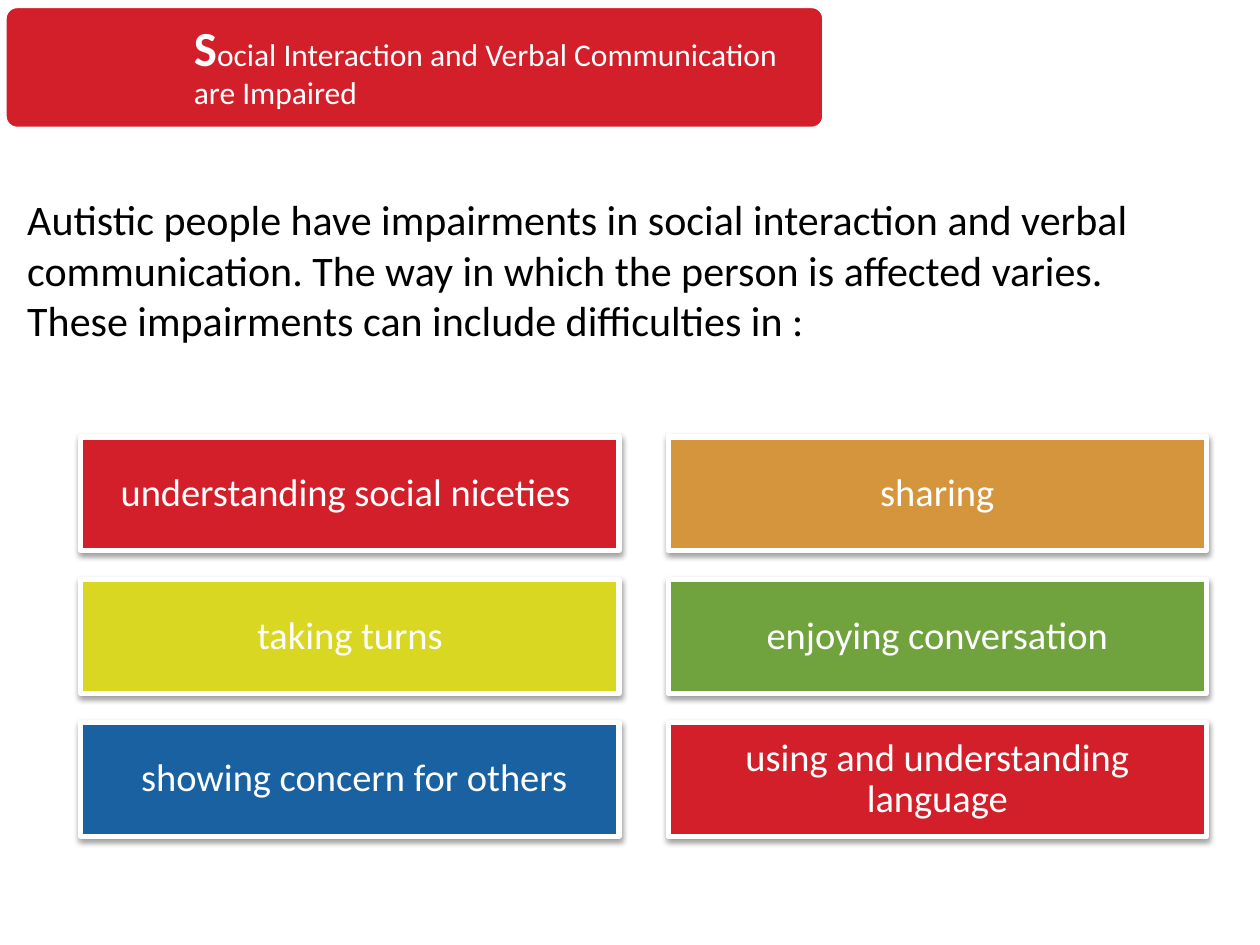
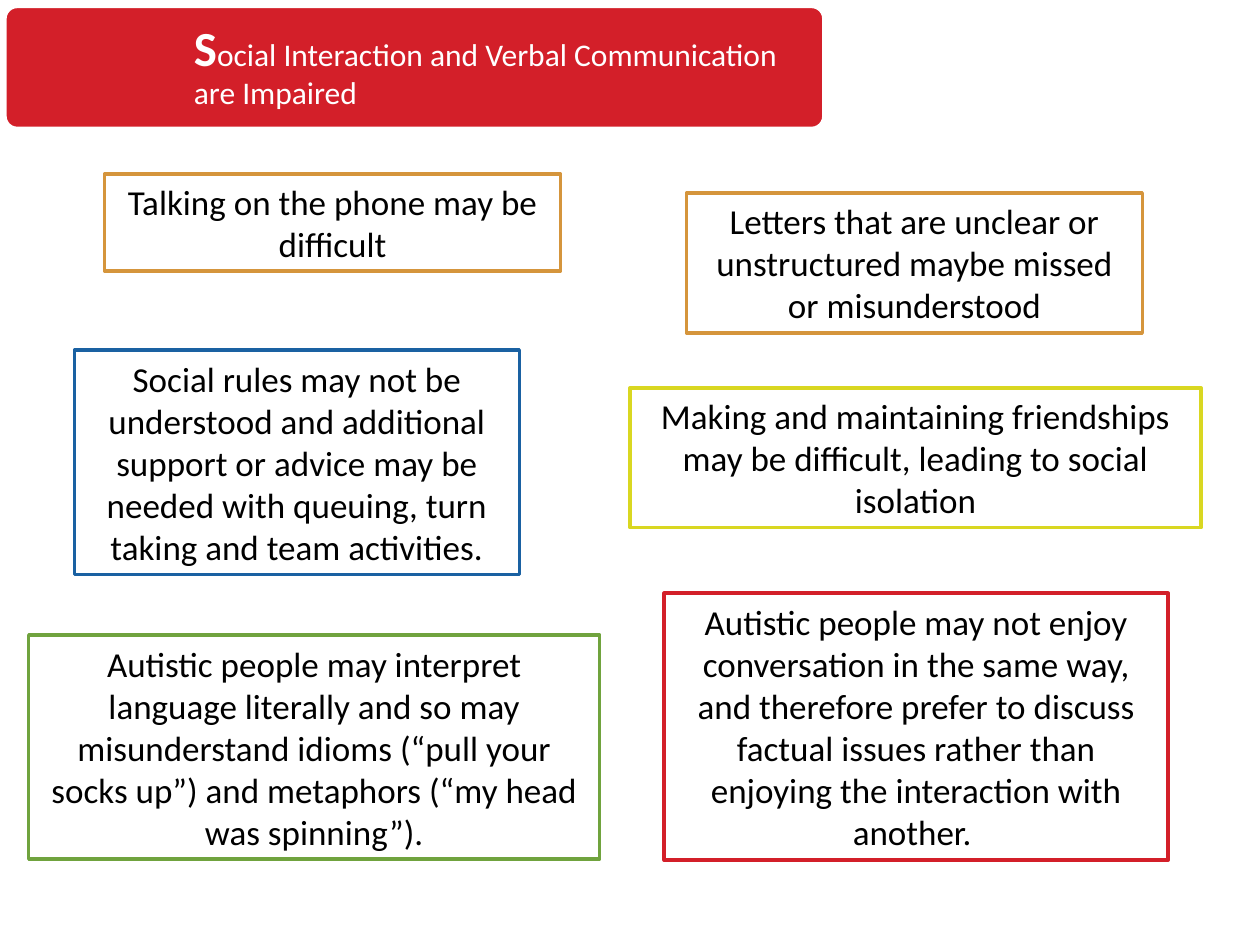
import lxml.etree
import pptx
import pptx.dml.color
import pptx.enum.shapes
import pptx.enum.text
import pptx.oxml.ns
import pptx.util

Cm, Pt = pptx.util.Cm, pptx.util.Pt
RGB = pptx.dml.color.RGBColor.from_string
qn = pptx.oxml.ns.qn
SHAPES = pptx.enum.shapes.MSO_SHAPE
MIDDLE = pptx.enum.text.MSO_ANCHOR.MIDDLE
GROW = pptx.enum.text.MSO_AUTO_SIZE.SHAPE_TO_FIT_TEXT
LEFT = pptx.enum.text.PP_ALIGN.LEFT
CENTER = pptx.enum.text.PP_ALIGN.CENTER

FONT = "Calibri"
COLORS = {
    "red": "D31F29",
    "orange": "D5953C",
    "yellow": "D9D721",
    "green": "70A33E",
    "blue": "1A61A2",
    "white": "FFFFFF",
    "black": "000000",
}
TITLE = [("S", 28, True),
         ("ocial Interaction and Verbal Communication are Impaired", 18, False)]


def add_block(s, kind, at, fill, line, line_width):
    """Add a flat filled and outlined shape; at is left, top, width, height in cm."""
    sp = s.shapes.add_shape(kind, *[Cm(v) for v in at])
    sp.shadow.inherit = False
    sp.fill.solid()
    sp.fill.fore_color.rgb = RGB(COLORS[fill])
    sp.line.color.rgb = RGB(COLORS[line])
    sp.line.width = Pt(line_width)
    return sp


def write_paragraph(sp, parts, color, align, spacing=1.0):
    """Fill a shape with one paragraph; parts are (text, size, bold)."""
    tf = sp.text_frame
    tf.word_wrap = True
    p = tf.paragraphs[0]
    p.alignment = align
    p.line_spacing = spacing
    for text, size, bold in parts:
        r = p.add_run()
        r.text = text
        r.font.name = FONT
        r.font.size = Pt(size)
        r.font.bold = bold
        r.font.color.rgb = RGB(COLORS[color])


prs = pptx.Presentation()
prs.slide_width, prs.slide_height = Cm(25.4), Cm(19.05)

# Both slides carry the same title band
slides = []
for _ in range(2):
    s = prs.slides.add_slide(prs.slide_layouts[6])
    band = add_block(s, SHAPES.ROUNDED_RECTANGLE, (0.1, 0.13, 16.51, 2.46), "red", "white", 2)
    band.adjustments[0] = 0.1
    title = s.shapes.add_textbox(Cm(3.61), Cm(0.13), Cm(12.98), Cm(2.46))
    tf = title.text_frame
    tf.vertical_anchor = MIDDLE
    tf.margin_left = tf.margin_top = tf.margin_right = tf.margin_bottom = Cm(0.3)
    write_paragraph(title, TITLE, "white", LEFT, 0.9)
    slides.append(s)
difficulties_slide, examples_slide = slides

# Slide 1: introduction and a grid of difficulties
intro = difficulties_slide.shapes.add_textbox(Cm(0.3), Cm(3.78), Cm(24), Cm(3.33))
intro.text_frame.auto_size = GROW
write_paragraph(intro, [(
    "Autistic people have impairments in social interaction and verbal communication. "
    "The way in which the person is affected varies. "
    "These impairments can include difficulties in :", 24, False)], "black", LEFT)

difficulties = [
    ("understanding social niceties ", "red"),
    ("sharing", "orange"),
    ("taking turns", "yellow"),
    ("enjoying conversation", "green"),
    (" showing concern for others", "blue"),
    ("using and understanding language", "red"),
]
for i, (text, fill) in enumerate(difficulties):
    row, col = divmod(i, 2)
    at = (1.63 + col * 11.84, 8.81 + row * 2.88, 10.85, 2.29)
    sp = add_block(difficulties_slide, SHAPES.RECTANGLE, at, fill, "white", 3)
    effects = sp._element.spPr.find(qn("a:effectLst"))
    shadow = lxml.etree.SubElement(effects, qn("a:outerShdw"), blurRad="40000",
                                   dist="20000", dir="5400000", rotWithShape="0")
    shade = lxml.etree.SubElement(shadow, qn("a:srgbClr"), val=COLORS["black"])
    lxml.etree.SubElement(shade, qn("a:alpha"), val="38000")
    tf = sp.text_frame
    tf.vertical_anchor = MIDDLE
    tf.margin_left = tf.margin_right = Cm(0.23)
    tf.margin_top = tf.margin_bottom = Cm(0.1)
    write_paragraph(sp, [(text, 22, False)], "white", CENTER, 0.9)

# Slide 2: outlined examples
examples = [
    ((2.11, 3.51, 9.19, 1.96), "orange", "Talking on the phone may be difficult"),
    ((1.5, 7.06, 8.97, 4.52), "blue",
     "Social rules may not be understood and additional support or advice may be "
     "needed with queuing, turn taking and team activities."),
    ((0.58, 12.8, 11.51, 4.52), "green",
     "Autistic people may interpret language literally and so may misunderstand "
     "idioms (“pull your socks up”) and metaphors (“my head was spinning”)."),
    ((13.84, 3.89, 9.19, 2.82), "orange",
     "Letters that are unclear or unstructured maybe missed or misunderstood"),
    ((12.7, 7.82, 11.51, 2.82), "yellow",
     "Making and maintaining friendships may be difficult, leading to social isolation"),
    ((13.39, 11.96, 10.16, 5.38), "red",
     "Autistic people may not enjoy conversation in the same way, and therefore prefer "
     "to discuss factual issues rather than enjoying the interaction with another. "),
]
for at, line, text in examples:
    sp = add_block(examples_slide, SHAPES.RECTANGLE, at, "white", line, 2)
    sp.text_frame.auto_size = GROW
    write_paragraph(sp, [(text, 20, False)], "black", CENTER)

prs.save("out.pptx")
